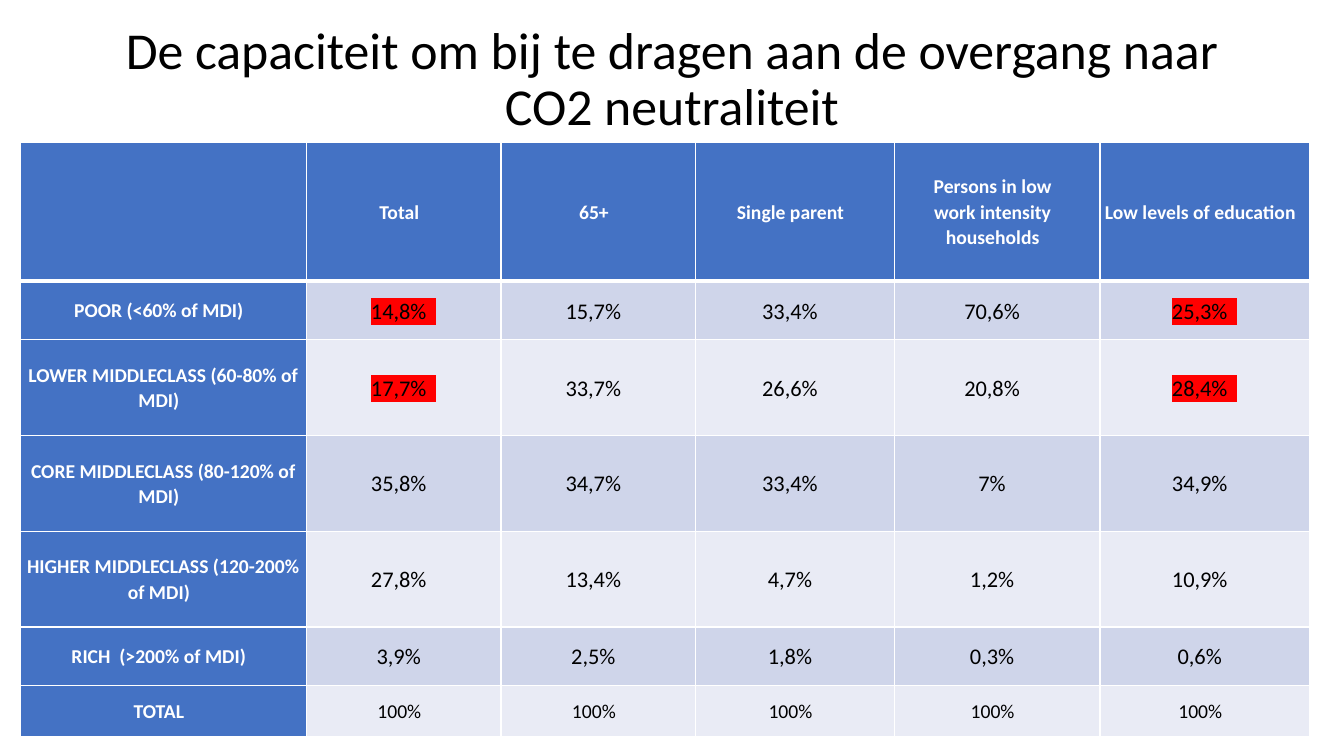
import pptx
import pptx.util
import pptx.dml.color
import pptx.enum.text
import pptx.oxml
import pptx.oxml.ns
from lxml import etree

# Content
TITLE = "De capaciteit om bij te dragen aan de overgang naar CO2 neutraliteit"
NBSP = chr(160)
PAD = NBSP * 2  # trailing space that closes every line of the table
HEADER = ["", "Total", "65+", "Single parent",
          "Persons in low\nwork intensity\nhouseholds", "Low levels of education"]
CLASSES = [
    ("POOR (<60% of MDI)", "14,8%", "15,7%", "33,4%", "70,6%", "25,3%"),
    ("LOWER MIDDLECLASS (60-80% of MDI)", "17,7%", "33,7%", "26,6%", "20,8%", "28,4%"),
    ("CORE MIDDLECLASS (80-120% of MDI)", "35,8%", "34,7%", "33,4%", "7%", "34,9%"),
    ("HIGHER MIDDLECLASS (120-200% of MDI)", "27,8%", "13,4%", "4,7%", "1,2%", "10,9%"),
    (f"RICH{NBSP} (>200% of MDI)", "3,9%", "2,5%", "1,8%", "0,3%", "0,6%"),
    ("TOTAL",) + ("100%",) * 5,
]
ROWS = [HEADER, *CLASSES]
HIGHLIGHTED = {(r, c) for r in (1, 2) for c in (1, 5)}

# Grid, in inches
COLS = [2.84, 1.93, 1.93, 1.97, 2.04, 2.08]
HEIGHTS = [1.38, 0.58, 0.95, 0.95, 0.95, 0.58, 0.51]
LEFT, TOP = 0.2, 1.41

# Look
FONT = "Calibri"
BLUE, BANDS = "4472C4", ("E9EBF5", "CFD5EA")
WHITE, BLACK, RED = "FFFFFF", "000000", "FF0000"

inch = pptx.util.Inches


def rgb(value):
    return pptx.dml.color.RGBColor.from_string(value)


def solid(parent, value, tag="a:solidFill"):
    fill = etree.SubElement(parent, pptx.oxml.ns.qn(tag))
    etree.SubElement(fill, pptx.oxml.ns.qn("a:srgbClr"), val=value)
    return fill


def write(tf, text, size, color=BLACK, bold=False, spacing=1.0, after=0, highlight=None):
    tf.word_wrap = True
    p = tf.paragraphs[0]
    p.alignment = pptx.enum.text.PP_ALIGN.CENTER
    p.line_spacing = spacing
    p.space_after = pptx.util.Pt(after)
    for i, line in enumerate(text.split("\n")):
        if i:
            p.add_line_break()
        r = p.add_run()
        r.text = line
        r.font.name, r.font.size, r.font.bold = FONT, pptx.util.Pt(size), bold
        r.font.color.rgb = rgb(color)
        if highlight:
            rPr = r.font._element
            mark = solid(rPr, highlight, "a:highlight")
            rPr.find(pptx.oxml.ns.qn("a:solidFill")).addnext(mark)


def border(cell, **widths):
    tcPr = cell._tc.get_or_add_tcPr()
    for i, side in enumerate("LRTB"):
        ln = etree.Element(pptx.oxml.ns.qn(f"a:ln{side}"),
                           w=str(pptx.util.Pt(widths.get(side, 1))))
        solid(ln, WHITE)
        tcPr.insert(i, ln)


def main():
    prs = pptx.Presentation()
    prs.slide_width, prs.slide_height = inch(13.33), inch(7.5)
    s = prs.slides.add_slide(prs.slide_layouts[5])

    # Title
    title = s.shapes.title
    title.left, title.top, title.width, title.height = map(inch, (1.1, 0.19, 11.13, 1.22))
    tf = title.text_frame
    tf.auto_size = pptx.enum.text.MSO_AUTO_SIZE.NONE
    tf.vertical_anchor = pptx.enum.text.MSO_ANCHOR.MIDDLE
    write(tf, TITLE, 37, spacing=0.9)

    # Table
    table = s.shapes.add_table(len(ROWS), len(COLS), inch(LEFT), inch(TOP),
                               inch(sum(COLS)), inch(sum(HEIGHTS))).table
    for column, width in zip(table.columns, COLS):
        column.width = inch(width)
    for row, height in zip(table.rows, HEIGHTS):
        row.height = inch(height)

    # Cells
    for r, row in enumerate(ROWS):
        for c, text in enumerate(row):
            cell = table.cell(r, c)
            heading = r == 0 or c == 0
            cell.fill.solid()
            cell.fill.fore_color.rgb = rgb(BLUE if heading else BANDS[r % 2])
            border(cell, B=3 if r == 0 else 1, T=3 if r == 1 else 1)
            cell.vertical_anchor = pptx.enum.text.MSO_ANCHOR.MIDDLE
            cell.margin_left = cell.margin_right = cell.margin_top = cell.margin_bottom = 0
            if text:
                small = heading or r == len(ROWS) - 1
                write(cell.text_frame, text.replace("\n", PAD + "\n") + PAD,
                      14 if small else 16, color=WHITE if heading else BLACK,
                      bold=heading, spacing=1.07, after=8,
                      highlight=RED if (r, c) in HIGHLIGHTED else None)

    prs.save("out.pptx")


if __name__ == "__main__":
    main()
